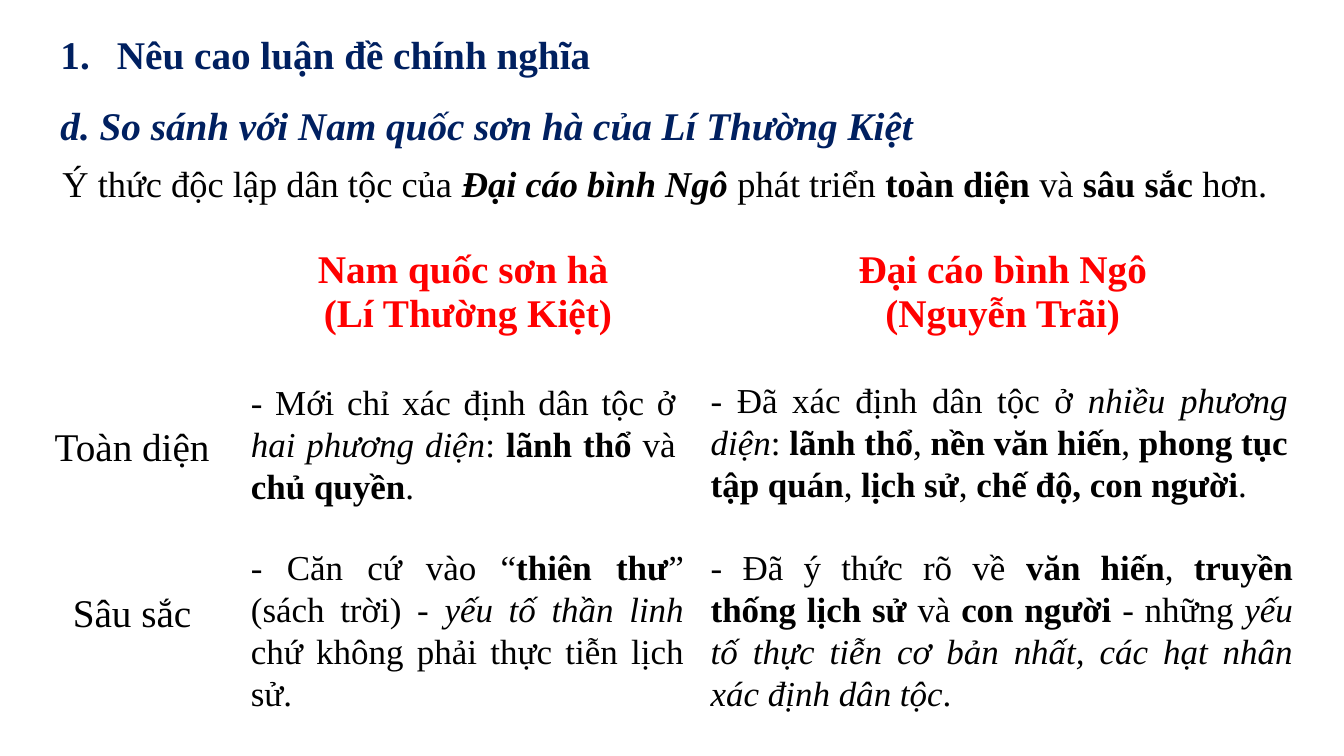
from dataclasses import dataclass

from lxml.etree import SubElement
from pptx import Presentation
from pptx.dml.color import RGBColor
from pptx.enum.text import MSO_ANCHOR, MSO_AUTO_SIZE, PP_ALIGN
from pptx.oxml.ns import qn
from pptx.util import Inches, Pt

FONT = "Times New Roman"
NAVY, RED, BLACK = "002060", "FF0000", "000000"
SLIDE_W, SLIDE_H = Inches(13.33), Inches(7.5)
FRAME = {"word_wrap": True, "auto_size": MSO_AUTO_SIZE.NONE,
         "vertical_anchor": MSO_ANCHOR.TOP}


@dataclass
class Box:
    """Place in percent of the slide; in text, * toggles bold and _ italic."""
    left: float
    top: float
    width: float
    height: float
    text: str = ""
    size: int = 25
    align: PP_ALIGN = PP_ALIGN.JUSTIFY


def across(share: float) -> int:
    return int(SLIDE_W * share / 100)


def down(share: float) -> int:
    return int(SLIDE_H * share / 100)


def rgb(color: str) -> RGBColor:
    return RGBColor.from_string(color)


def write(p, text: str, size: int, color: str, align: PP_ALIGN,
          spacing: float = 1.0) -> None:
    p.alignment, p.line_spacing = align, spacing
    for i, chunk in enumerate(text.split("*")):
        for j, part in enumerate(chunk.split("_")):
            if not part:
                continue
            r = p.add_run()
            r.text = part
            look = {"name": FONT, "size": Pt(size),
                    "bold": i % 2 == 1, "italic": j % 2 == 1}
            for key, value in look.items():
                setattr(r.font, key, value)
            r.font.color.rgb = rgb(color)


def place(sp, box: Box):
    place_values = {"left": across(box.left), "top": down(box.top),
                    "width": across(box.width), "height": down(box.height)}
    for key, value in place_values.items():
        setattr(sp, key, value)
    for key, value in FRAME.items():
        setattr(sp.text_frame, key, value)
    return sp.text_frame


def indent(p, margin: float, first: float) -> None:
    pPr = p._p.get_or_add_pPr()
    pPr.set("marL", str(Inches(margin)))
    pPr.set("indent", str(Inches(first)))


def number(p, color: str) -> None:
    pPr = p._p.get_or_add_pPr()
    SubElement(SubElement(pPr, qn("a:buClr")), qn("a:srgbClr")).set("val", color)
    SubElement(pPr, qn("a:buFont")).set("typeface", "+mj-lt")
    SubElement(pPr, qn("a:buAutoNum")).set("type", "arabicPeriod")


def add_heading(slide, box: Box) -> None:
    tf = place(slide.shapes.title, box)
    heading, subheading = tf.paragraphs[0], tf.add_paragraph()
    write(heading, "*Nêu cao luận đề chính nghĩa*", box.size, NAVY, box.align, 1.5)
    indent(heading, 1.06, -0.56)
    number(heading, NAVY)
    write(subheading, "*_d. So sánh với Nam quốc sơn hà của Lí Thường Kiệt_*",
          box.size, NAVY, box.align, 1.5)
    indent(subheading, 0.5, 0)


def add_text(slide, box: Box) -> None:
    tf = place(slide.shapes.add_textbox(0, 0, 0, 0), box)
    write(tf.paragraphs[0], box.text, box.size, BLACK, box.align)


def add_comparison(slide, left: float, top: float,
                   cols: list[float], rows: list[float]) -> None:
    table = slide.shapes.add_table(
        len(rows), len(cols), across(left), down(top),
        across(sum(cols)), down(sum(rows))).table
    for flag in ("first_row", "horz_banding"):
        setattr(table, flag, False)
    for col, share in zip(table.columns, cols):
        col.width = across(share)
    for row, share in zip(table.rows, rows):
        row.height = down(share)
    for cell in table.iter_cells():
        cell.fill.background()

    # Works along the top, criteria down the side
    for c, lines in enumerate(WORKS, start=1):
        tf = table.cell(0, c).text_frame
        for n, line in enumerate(lines):
            p = tf.add_paragraph() if n else tf.paragraphs[0]
            write(p, line, 28, RED, PP_ALIGN.CENTER)
    for r, criterion in enumerate(CRITERIA, start=1):
        p = table.cell(r, 0).text_frame.paragraphs[0]
        write(p, criterion, 28, BLACK, PP_ALIGN.CENTER, 2.1)


WORKS = [("*Nam quốc sơn hà *", "*(Lí Thường Kiệt)*"),
         ("*Đại cáo bình Ngô*", "*(Nguyễn Trãi)*")]
CRITERIA = ["Toàn diện", "Sâu sắc"]
HEADING = Box(0, 0.27, 95.35, 20.13, size=28, align=PP_ALIGN.LEFT)
INTRO = Box(3.23, 20.67, 94.82, 7.2,
            " Ý thức độc lập dân tộc của *_Đại cáo bình Ngô_* phát triển "
            "*toàn diện* và *sâu sắc* hơn.", 26, PP_ALIGN.LEFT)
LEFT_COL, RIGHT_COL = 17.93, 52.14
FINDINGS = [
    Box(LEFT_COL, 49.73, 33.08, 18.13,
        "- Mới chỉ xác định dân tộc ở _hai phương diện_: "
        "*lãnh thổ* và *chủ quyền*."),
    Box(RIGHT_COL, 49.47, 44.41, 18.13,
        "- Đã xác định dân tộc ở _nhiều phương diện_: *lãnh thổ*, "
        "*nền văn hiến*, *phong tục tập quán*, *lịch sử*, "
        "*chế độ, con người*."),
    Box(LEFT_COL, 71.47, 33.68, 29.33,
        "- Căn cứ vào “*thiên thư*” (sách trời) - _yếu tố thần linh_ "
        "chứ không phải thực tiễn lịch sử."),
    Box(RIGHT_COL, 71.47, 44.79, 23.73,
        "- Đã ý thức rõ về *văn hiến*,* truyền thống lịch sử *và* con người* "
        "- những _yếu tố thực tiễn cơ bản nhất, các hạt nhân "
        "xác định dân tộc_."),
]


def main() -> None:
    prs = Presentation()
    prs.slide_width, prs.slide_height = SLIDE_W, SLIDE_H
    slide = prs.slides.add_slide(prs.slide_layouts[5])

    # Heading and thesis
    add_heading(slide, HEADING)
    add_text(slide, INTRO)

    # Comparison grid with its findings
    add_comparison(slide, 2.18, 32.27, [15.3, 34.66, 44.94], [17.2, 22, 22.93])
    for finding in FINDINGS:
        add_text(slide, finding)
    prs.save("out.pptx")


if __name__ == "__main__":
    main()
